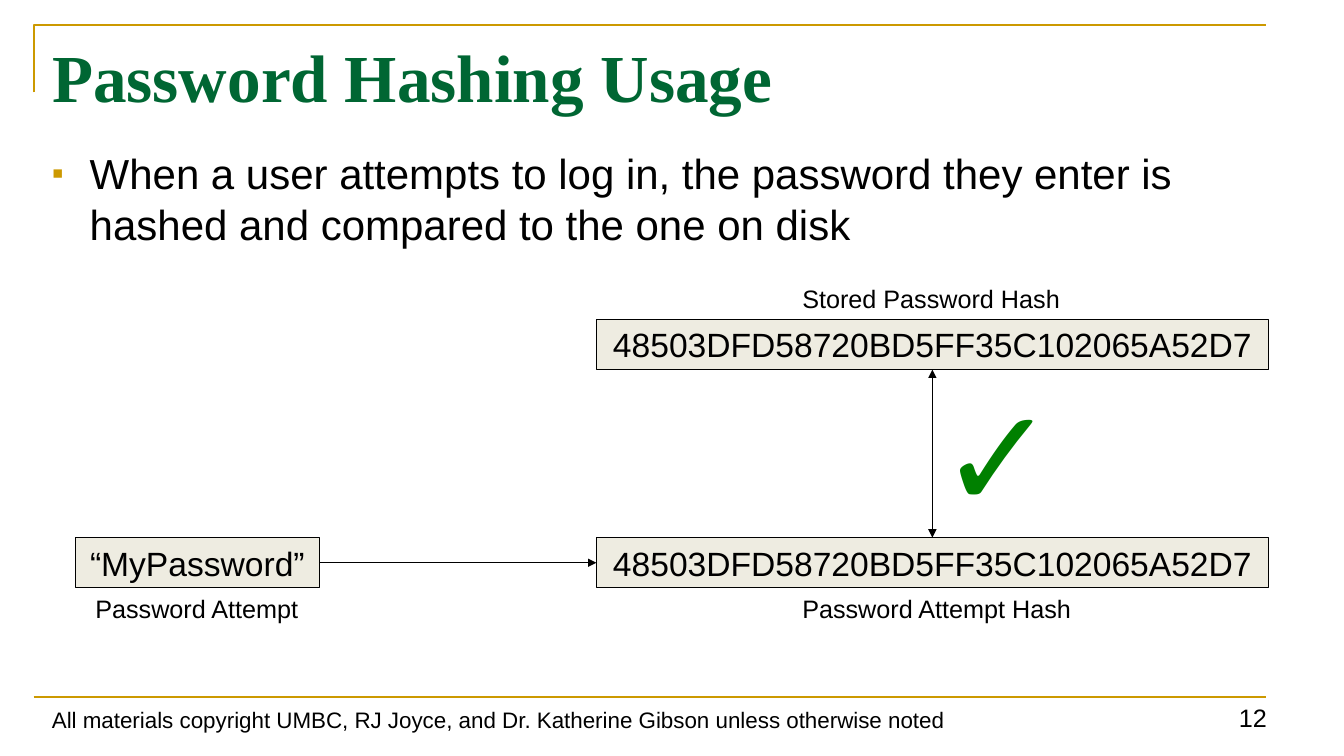
from dataclasses import dataclass

import lxml.etree
import pptx
import pptx.dml.color
import pptx.enum.shapes
import pptx.enum.text
import pptx.oxml
import pptx.oxml.ns
import pptx.util

Pt = pptx.util.Pt
Align = pptx.enum.text.PP_ALIGN
Anchor = pptx.enum.text.MSO_ANCHOR


@dataclass(frozen=True)
class Theme:
    sans: str = "Arial"
    serif: str = "Times New Roman"
    black: str = "000000"
    gold: str = "CC9900"
    heading: str = "006633"
    box: str = "EEECE1"
    check: str = "008000"
    title_size: float = 48
    body_size: float = 30
    box_size: float = 24
    label_size: float = 18
    footer_size: float = 16
    check_size: float = 100
    rule_width: float = 1.5
    thin_width: float = 0.75


@dataclass(frozen=True)
class Frame:
    left: float
    top: float
    width: float
    height: float

    @property
    def right(self) -> float:
        return self.left + self.width

    @property
    def bottom(self) -> float:
        return self.top + self.height

    @property
    def center(self) -> float:
        return self.left + self.width / 2

    @property
    def middle(self) -> float:
        return self.top + self.height / 2


@dataclass(frozen=True)
class Label:
    text: str
    frame: Frame
    size: float
    color: str = "000000"
    align: Align = Align.LEFT
    anchor: Anchor = Anchor.TOP
    wrap: bool = True


@dataclass(frozen=True)
class Box:
    text: str
    frame: Frame


@dataclass(frozen=True)
class Line:
    start: tuple[float, float]
    end: tuple[float, float]
    color: str
    width: float
    arrowheads: tuple[str, ...] = ()


THEME = Theme()
PASSWORD_HASH = "48503DFD58720BD5FF35C102065A52D7"

STORED = Box(PASSWORD_HASH, Frame(426, 228, 480, 36))
ATTEMPT = Box("“MyPassword”", Frame(54, 384, 174, 36))
ATTEMPT_HASH = Box(PASSWORD_HASH, Frame(426, 384, 480, 36))

LABELS = [
    Label("All materials copyright UMBC, RJ Joyce, and Dr. Katherine Gibson unless otherwise noted",
          Frame(30, 492, 744, 35), THEME.footer_size, anchor=Anchor.BOTTOM),
    Label("12", Frame(808, 492, 104, 35), THEME.label_size,
          align=Align.RIGHT, anchor=Anchor.BOTTOM),
    Label("Stored Password Hash", Frame(566, 199, 200, 29), THEME.label_size, wrap=False),
    Label("Password Attempt", Frame(61, 420, 160, 29), THEME.label_size, wrap=False),
    Label("Password Attempt Hash", Frame(566, 420, 208, 29), THEME.label_size, wrap=False),
    Label("✓", Frame(664, 260, 81, 128), THEME.check_size, THEME.check),
]

LINES = [
    Line((24, 498), (904, 498), THEME.gold, THEME.rule_width),
    Line((ATTEMPT.frame.right, ATTEMPT.frame.middle),
         (ATTEMPT_HASH.frame.left, ATTEMPT_HASH.frame.middle),
         THEME.black, THEME.thin_width, ("tailEnd",)),
    Line((STORED.frame.center, STORED.frame.bottom),
         (ATTEMPT_HASH.frame.center, ATTEMPT_HASH.frame.top),
         THEME.black, THEME.thin_width, ("headEnd", "tailEnd")),
]


def rgb(color: str) -> pptx.dml.color.RGBColor:
    return pptx.dml.color.RGBColor.from_string(color)


def add_element(parent, tag: str, **attributes: str):
    return lxml.etree.SubElement(parent, pptx.oxml.ns.qn(tag), attributes)


def place(shape, frame: Frame) -> None:
    shape.left, shape.top = Pt(frame.left), Pt(frame.top)
    shape.width, shape.height = Pt(frame.width), Pt(frame.height)


def write(shape, text: str, size: float, color: str = THEME.black,
          font: str = THEME.sans, bold: bool = False,
          align: Align = Align.LEFT, anchor: Anchor = Anchor.TOP, wrap: bool = True) -> None:
    frame = shape.text_frame
    frame.text = text
    frame.word_wrap = wrap
    frame.vertical_anchor = anchor
    paragraph = frame.paragraphs[0]
    paragraph.alignment = align
    run_font = paragraph.runs[0].font
    run_font.name, run_font.size, run_font.bold = font, Pt(size), bold
    run_font.color.rgb = rgb(color)


def add_label(slide, label: Label):
    frame = label.frame
    shape = slide.shapes.add_textbox(Pt(frame.left), Pt(frame.top), Pt(frame.width), Pt(frame.height))
    write(shape, label.text, label.size, label.color,
          align=label.align, anchor=label.anchor, wrap=label.wrap)
    return shape


def add_box(slide, box: Box) -> None:
    frame = box.frame
    shape = slide.shapes.add_shape(
        pptx.enum.shapes.MSO_SHAPE.RECTANGLE,
        Pt(frame.left), Pt(frame.top), Pt(frame.width), Pt(frame.height))
    shape.shadow.inherit = False
    shape.fill.solid()
    shape.fill.fore_color.rgb = rgb(THEME.box)
    shape.line.color.rgb = rgb(THEME.black)
    shape.line.width = Pt(THEME.thin_width)
    write(shape, box.text, THEME.box_size, align=Align.CENTER, anchor=Anchor.MIDDLE)


def add_line(slide, line: Line) -> None:
    connector = slide.shapes.add_connector(
        pptx.enum.shapes.MSO_CONNECTOR.STRAIGHT,
        *(Pt(value) for value in line.start + line.end))
    connector.line.color.rgb = rgb(line.color)
    connector.line.width = Pt(line.width)
    for end in line.arrowheads:
        add_element(connector.line._get_or_add_ln(), f"a:{end}", type="triangle")
    add_element(connector._element.spPr, "a:effectLst")


def add_corner_rule(slide) -> None:
    builder = slide.shapes.build_freeform(24, 66, scale=float(Pt(1)))
    builder.add_line_segments([(24, 18), (904, 18)], close=False)
    shape = builder.convert_to_shape()
    shape.shadow.inherit = False
    shape.fill.background()
    shape.line.color.rgb = rgb(THEME.gold)
    shape.line.width = Pt(THEME.rule_width)


def add_bullet(paragraph) -> None:
    paragraph.space_before = Pt(7.5)
    properties = paragraph._p.get_or_add_pPr()
    properties.set("marL", str(Pt(27)))
    properties.set("indent", str(-Pt(27)))
    color = add_element(properties, "a:buClr")
    add_element(color, "a:srgbClr", val=THEME.gold)
    add_element(properties, "a:buSzPct", val="80000")
    add_element(properties, "a:buFont", typeface=THEME.sans)
    add_element(properties, "a:buChar", char="▪")


def main() -> None:
    presentation = pptx.Presentation()
    presentation.slide_width, presentation.slide_height = Pt(960), Pt(540)
    slide = presentation.slides.add_slide(presentation.slide_layouts.get_by_name("Title Only"))
    title = slide.shapes.title
    place(title, Frame(30, 21.6, 881, 80))
    write(title, "Password Hashing Usage", THEME.title_size, THEME.heading, THEME.serif, bold=True)
    body = add_label(slide, Label(
        "When a user attempts to log in, the password they enter is hashed and compared to the one on disk",
        Frame(30, 102, 912, 380), THEME.body_size))
    add_bullet(body.text_frame.paragraphs[0])
    add_corner_rule(slide)
    for box in (STORED, ATTEMPT, ATTEMPT_HASH):
        add_box(slide, box)
    for line in LINES:
        add_line(slide, line)
    for label in LABELS:
        add_label(slide, label)
    presentation.save("out.pptx")


if __name__ == "__main__":
    main()
